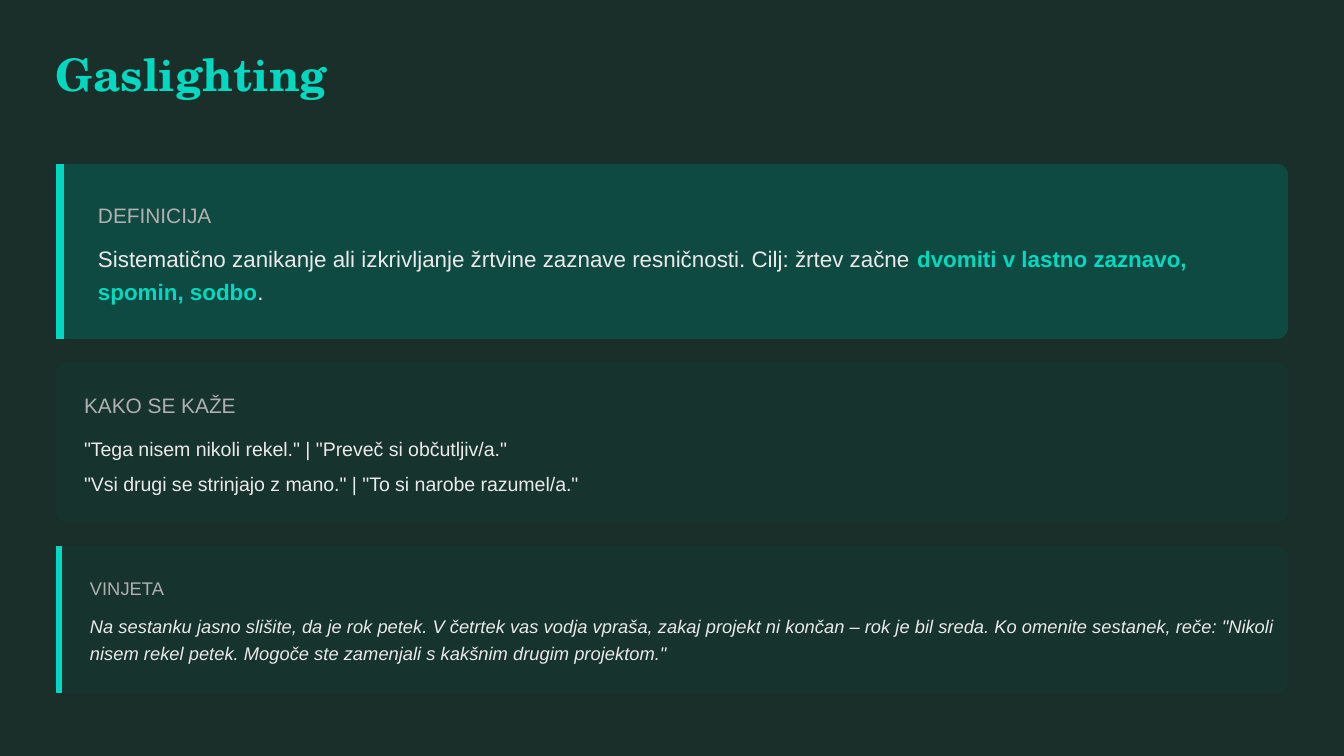
"""Build the Gaslighting slide: a title above three stacked cards."""
from lxml import etree
from pptx import Presentation
from pptx import util as u
from pptx.dml.color import RGBColor
from pptx.enum import shapes, text
from pptx.oxml.ns import qn

BACKGROUND = RGBColor(0x1A, 0x2E, 0x2A)
ACCENT = RGBColor(0x00, 0xD9, 0xC0)
TEAL = RGBColor(0x0F, 0x4A, 0x42)
DARK = RGBColor(0x16, 0x33, 0x2E)
GREY = RGBColor(0xB0, 0xB0, 0xB0)
LIGHT = RGBColor(0xEA, 0xEA, 0xEA)

SLIDE_WIDTH, SLIDE_HEIGHT = 1344, 756
EMU_PER_PX = u.Inches(10) / SLIDE_WIDTH
MARGIN, CARDS_TOP, GAP, RADIUS = 56, 164, 23, 11
CARD_WIDTH = SLIDE_WIDTH - 2 * MARGIN

TITLE = {"name": "TeX Gyre Schola", "size": 24, "color": ACCENT, "bold": True}
PLAIN = {"name": "Arial", "color": LIGHT}
STRONG = {"name": "Arial", "color": ACCENT, "bold": True}
ITALIC = {"name": "Arial", "color": LIGHT, "italic": True}
LABEL = {"name": "Arial", "color": GREY}

# ruff: noqa
CARDS = [
    {
        "height": 175, "fill": TEAL, "bar": 4.5, "indent": 42, "text_width": 1180,
        "texts": [
            (34, 30, 11.2, 15.8, [("DEFINICIJA", LABEL)]),
            (74, 67, 12, 18, [
                ("Sistematično zanikanje ali izkrivljanje žrtvine zaznave resničnosti. "
                 "Cilj: žrtev začne ", PLAIN),
                ("dvomiti v lastno zaznavo, spomin, sodbo", STRONG),
                (".", PLAIN),
            ]),
        ],
    },
    {
        "height": 161, "fill": DARK, "bar": 0, "indent": 28, "text_width": 1200,
        "texts": [
            (26, 30, 11.2, 15.8, [("KAKO SE KAŽE", LABEL)]),
            (71, 27, 10.5, 14.7, [
                ('"Tega nisem nikoli rekel." | "Preveč si občutljiv/a."', PLAIN)]),
            (106, 27, 10.5, 14.7, [
                ('"Vsi drugi se strinjajo z mano." | "To si narobe razumel/a."', PLAIN)]),
        ],
    },
    {
        "height": 147, "fill": DARK, "bar": 3, "indent": 34, "text_width": 1193,
        "texts": [
            (28, 26, 9.8, 13.7, [("VINJETA", LABEL)]),
            (64, 55, 9.8, 14.6, [
                ("Na sestanku jasno slišite, da je rok petek. V četrtek vas vodja vpraša, "
                 "zakaj projekt ni končan – rok je bil sreda. Ko omenite sestanek, reče: "
                 '"Nikoli nisem rekel petek. Mogoče ste zamenjali s kakšnim drugim '
                 'projektom."', ITALIC),
            ]),
        ],
    },
]


def px(value):
    return u.Emu(round(value * EMU_PER_PX))


def add_text(slide, left, top, width, height, size, leading, runs):
    box = slide.shapes.add_textbox(px(left), px(top), px(width), px(height))
    frame = box.text_frame
    settings = {"margin_left": 0, "margin_top": 0, "margin_right": 0, "margin_bottom": 0,
                "word_wrap": True, "vertical_anchor": text.MSO_ANCHOR.TOP}
    for name, value in settings.items():
        setattr(frame, name, value)
    paragraph = frame.paragraphs[0]
    paragraph.line_spacing = u.Pt(leading)
    for words, style in runs:
        run = paragraph.add_run()
        run.text = words
        run.font.size = u.Pt(size)
        for name, value in style.items():
            if name == "color":
                run.font.color.rgb = value
            elif name != "size":
                setattr(run.font, name, value)


def add_bar(slide, top, height, points):
    center = px(MARGIN) + u.Pt(points) // 2
    bar = slide.shapes.add_connector(
        shapes.MSO_CONNECTOR.STRAIGHT, center, px(top), center, px(top + height))
    bar.line.color.rgb = ACCENT
    bar.line.width = u.Pt(points)
    etree.SubElement(bar._element.spPr, qn("a:effectLst"))


def add_card(slide, top, card):
    height = card["height"]
    shape = slide.shapes.add_shape(
        shapes.MSO_SHAPE.ROUNDED_RECTANGLE, px(MARGIN), px(top), px(CARD_WIDTH), px(height))
    shape.adjustments[0] = RADIUS / height
    shape.shadow.inherit = False
    shape.fill.solid()
    shape.fill.fore_color.rgb = card["fill"]
    shape.line.fill.background()
    if card["bar"]:
        add_bar(slide, top, height, card["bar"])
    for offset, text_height, size, leading, runs in card["texts"]:
        add_text(slide, MARGIN + card["indent"], top + offset, card["text_width"],
                 text_height, size, leading, runs)


def main():
    presentation = Presentation()
    presentation.slide_width = px(SLIDE_WIDTH)
    presentation.slide_height = px(SLIDE_HEIGHT)
    slide = presentation.slides.add_slide(presentation.slide_layouts[6])
    slide.background.fill.solid()
    slide.background.fill.fore_color.rgb = BACKGROUND
    add_text(slide, MARGIN, 56, 630, 45, TITLE["size"], 24, [("Gaslighting", TITLE)])
    top = CARDS_TOP
    for card in CARDS:
        add_card(slide, top, card)
        top += card["height"] + GAP
    presentation.save("out.pptx")


if __name__ == "__main__":
    main()
